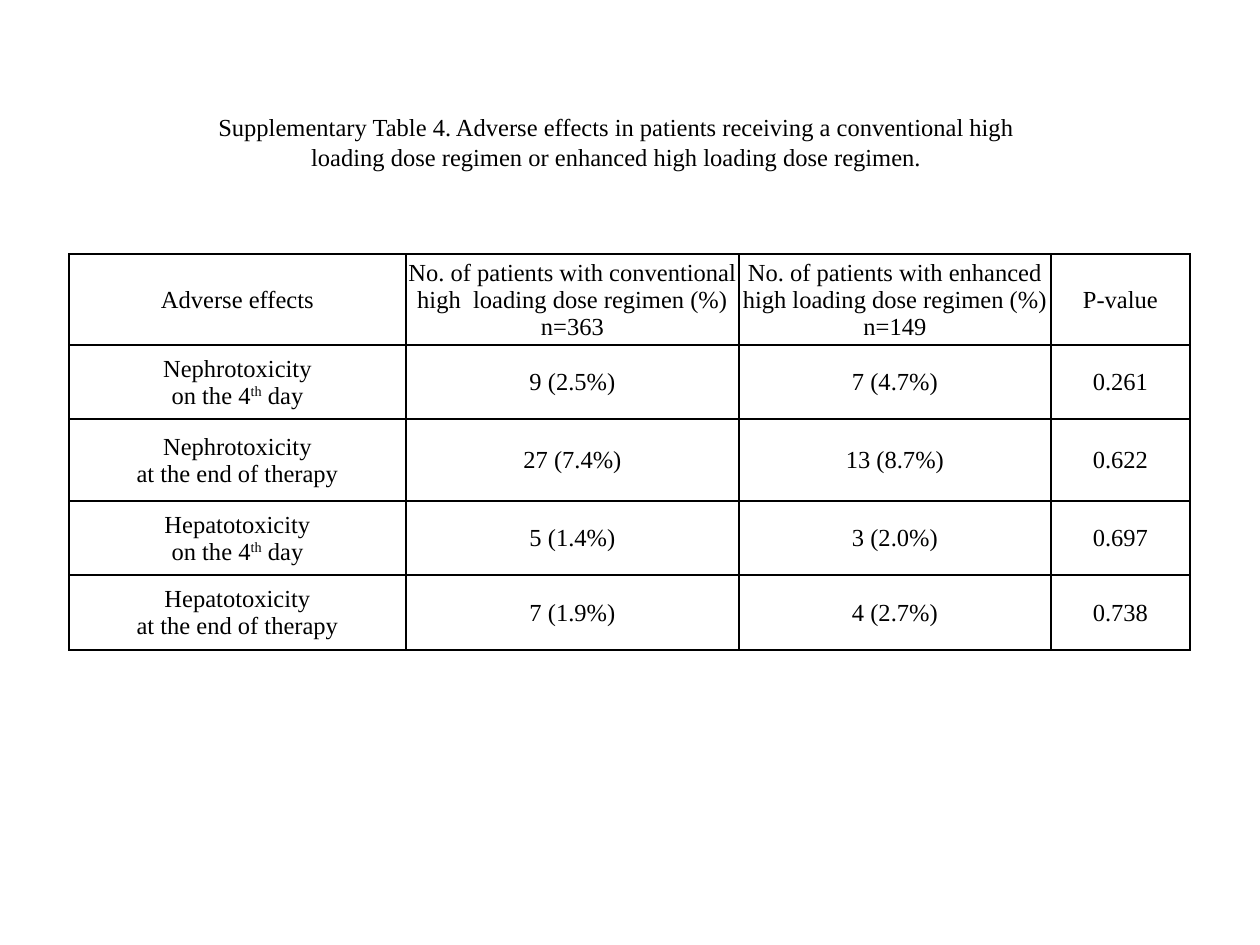
from lxml import etree
from pptx import Presentation
from pptx.dml.color import RGBColor
from pptx.enum.text import MSO_ANCHOR, PP_ALIGN
from pptx.oxml.ns import qn
from pptx.util import Pt

MID = MSO_ANCHOR.MIDDLE
CENTER = PP_ALIGN.CENTER
SCALE = 914400 / 126

TITLE = ("Supplementary Table 4. Adverse effects in patients receiving a conventional high "
         "loading dose regimen or enhanced high loading dose regimen.")
COLS = [337, 333, 312, 139]
ROWS = [91, 74, 82, 74, 75]
DAY = "on the 4^th^ day"
END = "at the end of therapy"
CELLS = [
    ["Adverse effects",
     "No. of patients with conventional high  loading dose regimen (%) n=363",
     "No. of patients with enhanced high loading dose regimen (%)\nn=149",
     "P-value"],
    ["Nephrotoxicity\n" + DAY, "9 (2.5%)", "7 (4.7%)", "0.261"],
    ["Nephrotoxicity\n" + END, "27 (7.4%)", "13 (8.7%)", "0.622"],
    ["Hepatotoxicity\n" + DAY, "5 (1.4%)", "3 (2.0%)", "0.697"],
    ["Hepatotoxicity\n" + END, "7 (1.9%)", "4 (2.7%)", "0.738"],
]


def px(n):
    """Turn px into EMU."""
    return round(n * SCALE)


def color(code):
    """Turn a hex string into a colour."""
    return RGBColor.from_string(code)


class Page:
    """Hold the style and the current slide."""

    def __init__(self, slide, font="Times New Roman", size=14, ink="000000"):
        """Keep the slide, font, size and ink."""
        self.slide, self.font, self.size, self.ink = slide, font, size, ink

    def lines(self, frame, text):
        """Fill a frame with centred lines, raising what stands between carets."""
        frame.word_wrap = True
        for i, line in enumerate(text.split("\n")):
            para = frame.add_paragraph() if i else frame.paragraphs[0]
            para.alignment = CENTER
            for j, part in enumerate(line.split("^")):
                run = para.add_run()
                run.text = part
                run.font.name = self.font
                run.font.size = Pt(self.size)
                run.font.color.rgb = color(self.ink)
                if j % 2:
                    run.font._element.set("baseline", "30000")

    def label(self, text, left, top, width, height):
        """Add a text box."""
        box = self.slide.shapes.add_textbox(px(left), px(top), px(width), px(height))
        self.lines(box.text_frame, text)

    def border(self, cell):
        """Draw the four sides of a cell."""
        props = cell._tc.get_or_add_tcPr()
        for i, side in enumerate(("a:lnL", "a:lnR", "a:lnT", "a:lnB")):
            line = etree.Element(qn(side), w=str(int(Pt(1))))
            fill = etree.SubElement(line, qn("a:solidFill"))
            etree.SubElement(fill, qn("a:srgbClr"), val=self.ink)
            props.insert(i, line)

    def table(self, rows, left, top, widths, heights):
        """Add a bordered table without fill."""
        grid = self.slide.shapes.add_table(
            len(heights), len(widths), px(left), px(top),
            px(sum(widths)), px(sum(heights))).table
        grid.first_row = grid.horz_banding = False
        for col, width in zip(grid.columns, widths):
            col.width = px(width)
        for row, height, texts in zip(grid.rows, heights, rows):
            row.height = px(height)
            for cell, text in zip(row.cells, texts):
                cell.margin_left = cell.margin_right = cell.margin_top = px(1)
                cell.margin_bottom = 0
                cell.vertical_anchor = MID
                cell.fill.background()
                self.border(cell)
                self.lines(cell.text_frame, text)


def main():
    """Build the slide and save it."""
    deck = Presentation()
    deck.slide_width, deck.slide_height = px(1260), px(945)
    page = Page(deck.slides.add_slide(deck.slide_layouts[6]))
    page.table(CELLS, 69, 254, COLS, ROWS)
    page.label(TITLE, 194, 106, 845, 72)
    deck.save("out.pptx")


if __name__ == "__main__":
    main()
